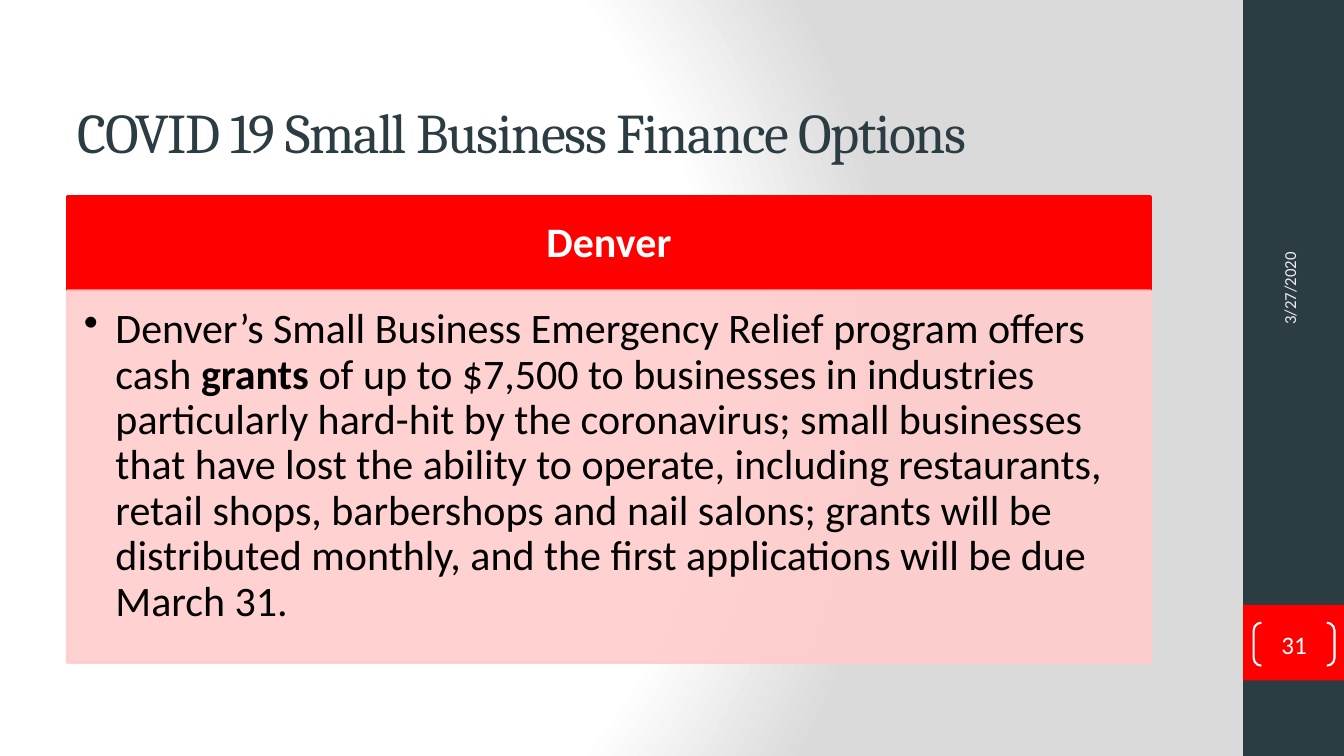
from dataclasses import dataclass, field
from typing import Any

from lxml.etree import SubElement
from pptx import Presentation
from pptx.dml.color import RGBColor
from pptx.enum.shapes import MSO_SHAPE as Preset
from pptx.enum.text import MSO_ANCHOR as Anchor, PP_ALIGN as Align
from pptx.oxml import parse_xml
from pptx.oxml.ns import nsdecls, qn
from pptx.util import Emu, Pt

PX = 9525
SLATE = RGBColor(0x2C, 0x3C, 0x43)
RED = RGBColor(0xFF, 0x00, 0x00)
PINK = RGBColor(0xFF, 0xCC, 0xCC)
MIST = RGBColor(0xEB, 0xEB, 0xEB)
GREY = RGBColor(0xDA, 0xDA, 0xDA)
WHITE = RGBColor(0xFF, 0xFF, 0xFF)
BLACK = RGBColor(0x00, 0x00, 0x00)

RELIEF_RUNS = (
    ("Denver’s Small Business Emergency Relief program offers cash ", False),
    ("grants", True),
    (" of up to $7,500 to businesses in industries particularly hard-hit by the "
     "coronavirus; small businesses that have lost the ability to operate, including "
     "restaurants, retail shops, barbershops and nail salons; grants will be "
     "distributed monthly, and the first applications will be due March 31.", False),
)


@dataclass(frozen=True)
class Label:
    runs: tuple[tuple[str, bool], ...]
    size: int
    color: RGBColor
    font: str = "Calibri"
    margins: tuple[int, int, int, int] = (10, 5, 10, 5)
    anchor: Any = Anchor.MIDDLE
    paragraph: dict[str, Any] = field(default_factory=dict)
    tracking: int = 0
    bullet_indent: int = 0


@dataclass(frozen=True)
class Panel:
    box: tuple[int, int, int, int]
    preset: Any = Preset.RECTANGLE
    fill: RGBColor | None = None
    line: RGBColor | None = None
    line_width: float = 2
    opacity: int = 100
    adjustment: float | None = None
    label: Label | None = None


@dataclass(frozen=True)
class Caption:
    box: tuple[int, int, int, int]
    label: Label
    rotation: int = 0


CENTERED = {"alignment": Align.CENTER}

PANELS = (
    Panel((1184, 0, 96, 720), fill=SLATE),
    Panel((1184, 576, 96, 72), fill=RED),
    Panel((64, 187, 1032, 90), fill=RED, line=RED,
          label=Label((("Denver", True),), 30, WHITE, margins=(22, 12, 22, 12),
                      paragraph=CENTERED | {"line_spacing": 0.9})),
    Panel((64, 277, 1032, 354), fill=PINK, line=PINK, opacity=90,
          label=Label(RELIEF_RUNS, 30, BLACK, margins=(16, 16, 22, 25),
                      anchor=Anchor.TOP, bullet_indent=30,
                      paragraph={"alignment": Align.LEFT, "line_spacing": 0.9})),
    Panel((1194, 593, 77, 41), preset=Preset.DOUBLE_BRACKET, line=WHITE,
          line_width=1.5, adjustment=0.179,
          label=Label((("31", False),), 18, WHITE, margins=(0, 0, 0, 0),
                      paragraph=CENTERED)),
)

CAPTIONS = (
    Caption((64, 29, 1067, 128),
            Label((("COVID 19 Small Business Finance Options", False),), 40, SLATE,
                  font="Cambria", margins=(10, 5, 10, 0), anchor=Anchor.BOTTOM,
                  tracking=-100)),
    Caption((1100, 166, 256, 51), Label((("3/27/2020", False),), 12, MIST), rotation=270),
)


def to_emu(lengths: tuple[int, ...]) -> list[Emu]:
    return [Emu(length * PX) for length in lengths]


def assign(target: Any, values: dict[str, Any]) -> None:
    for name, value in values.items():
        setattr(target, name, value)


def paint_background(slide: Any) -> None:
    stops = "".join(
        f'<a:gs pos="{percent * 1000}"><a:srgbClr val="{color}"/></a:gs>'
        for percent, color in ((0, WHITE), (75, WHITE), (100, GREY)))
    backdrop = parse_xml(
        f'<p:bg {nsdecls("p", "a")}><p:bgPr><a:gradFill rotWithShape="1">'
        f'<a:gsLst>{stops}</a:gsLst><a:path path="circle">'
        '<a:fillToRect l="20000" t="50000" r="100000" b="50000"/></a:path>'
        '</a:gradFill><a:effectLst/></p:bgPr></p:bg>')
    slide.element.cSld.insert(0, backdrop)


def set_opacity(shape: Any, percent: int) -> None:
    for color in shape.element.spPr.iter(qn("a:srgbClr")):
        SubElement(color, qn("a:alpha")).set("val", str(percent * 1000))


def write_label(frame: Any, label: Label) -> None:
    left, top, right, bottom = to_emu(label.margins)
    assign(frame, {"word_wrap": True, "vertical_anchor": label.anchor,
                   "margin_left": left, "margin_top": top,
                   "margin_right": right, "margin_bottom": bottom})
    paragraph = frame.paragraphs[0]
    if label.bullet_indent:
        properties = paragraph._p.get_or_add_pPr()
        indent = label.bullet_indent * PX
        properties.set("marL", str(indent))
        properties.set("indent", str(-indent))
        SubElement(properties, qn("a:buChar")).set("char", "•")
    assign(paragraph, label.paragraph)
    for text, bold in label.runs:
        run = paragraph.add_run()
        run.text = text
        assign(run.font, {"name": label.font, "size": Pt(label.size), "bold": bold})
        run.font.color.rgb = label.color
        if label.tracking:
            run._r.get_or_add_rPr().set("spc", str(label.tracking))


def draw_panel(slide: Any, panel: Panel) -> None:
    shape = slide.shapes.add_shape(panel.preset, *to_emu(panel.box))
    shape.shadow.inherit = False
    if panel.fill is None:
        shape.fill.background()
    else:
        shape.fill.solid()
        shape.fill.fore_color.rgb = panel.fill
    if panel.line is None:
        shape.line.fill.background()
    else:
        shape.line.color.rgb = panel.line
        shape.line.width = Pt(panel.line_width)
    if panel.opacity < 100:
        set_opacity(shape, panel.opacity)
    if panel.adjustment is not None:
        shape.adjustments[0] = panel.adjustment
    if panel.label:
        write_label(shape.text_frame, panel.label)


def draw_caption(slide: Any, caption: Caption) -> None:
    textbox = slide.shapes.add_textbox(*to_emu(caption.box))
    textbox.rotation = caption.rotation
    write_label(textbox.text_frame, caption.label)


def main() -> None:
    deck = Presentation()
    deck.slide_width, deck.slide_height = to_emu((1280, 720))
    slide = deck.slides.add_slide(deck.slide_layouts[6])
    paint_background(slide)
    for panel in PANELS:
        draw_panel(slide, panel)
    for caption in CAPTIONS:
        draw_caption(slide, caption)
    deck.save("out.pptx")


if __name__ == "__main__":
    main()
